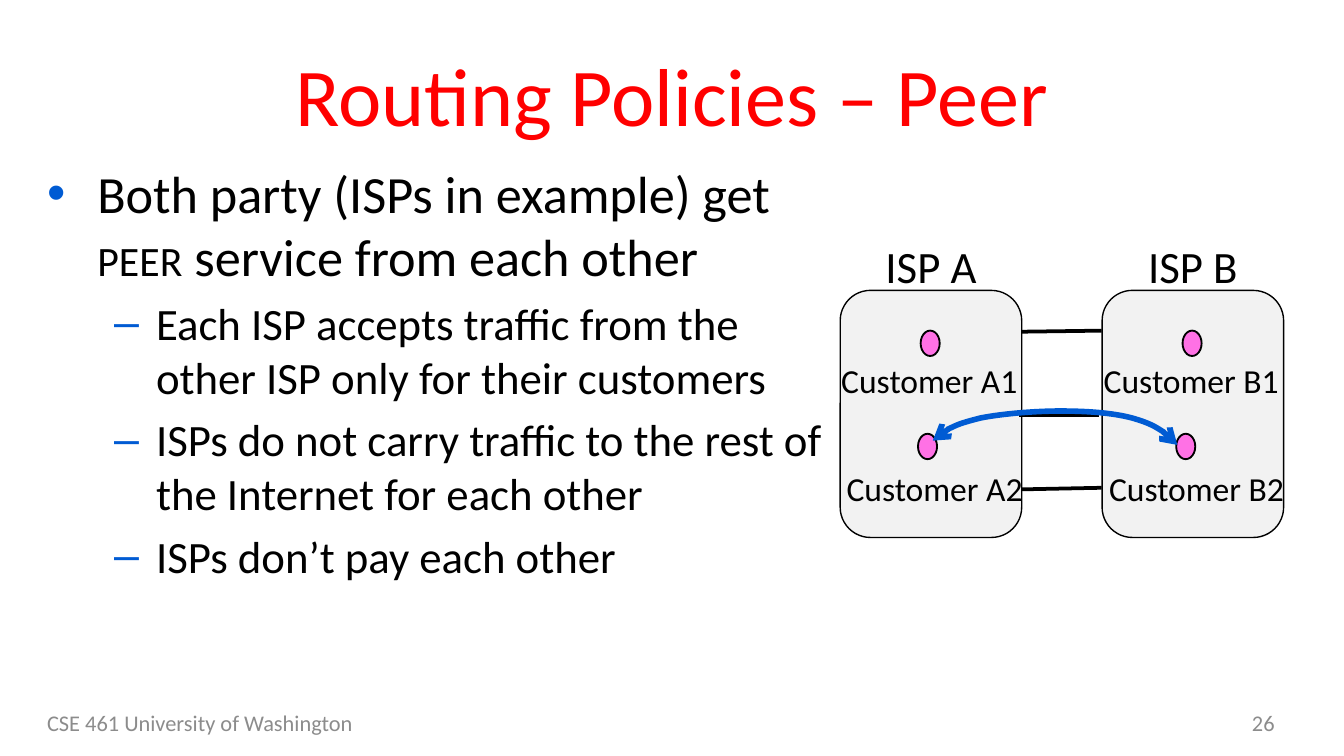
from typing import NamedTuple

from lxml import etree
from pptx import Presentation
from pptx.dml.color import RGBColor
from pptx.enum.shapes import MSO_CONNECTOR, MSO_SHAPE
from pptx.enum.text import MSO_ANCHOR, PP_ALIGN
from pptx.oxml.ns import qn
from pptx.util import Cm, Pt

LEFT, CENTER, RIGHT = PP_ALIGN.LEFT, PP_ALIGN.CENTER, PP_ALIGN.RIGHT
TOP, MIDDLE = MSO_ANCHOR.TOP, MSO_ANCHOR.MIDDLE
ROUNDED, OVAL = MSO_SHAPE.ROUNDED_RECTANGLE, MSO_SHAPE.OVAL
STRAIGHT = MSO_CONNECTOR.STRAIGHT

FONT = "Calibri"
BLACK = RGBColor(0x00, 0x00, 0x00)
RED = RGBColor(0xFF, 0x00, 0x00)
GRAY = RGBColor(0x8C, 0x8C, 0x8C)
PALE = RGBColor(0xF2, 0xF2, 0xF2)
PINK = RGBColor(0xFF, 0x71, 0xE5)
BLUE = RGBColor(0x00, 0x5B, 0xD3)


class Box(NamedTuple):
    x: float
    y: float
    w: float
    h: float


class Bullet(NamedTuple):
    char: str
    level: int
    margin: float
    hang: float
    size: int
    runs: list[tuple[str, bool]]


class Isp(NamedTuple):
    letter: str
    x: float
    lower_dot: float


class Link(NamedTuple):
    x: float
    y1: float
    y2: float


BULLETS = [
    Bullet("•", 0, 0.95, 0.95, 28, [("Both party (ISPs in example) get ", False),
                                    ("peer", True),
                                    (" service from each other", False)]),
] + [
    Bullet("–", 1, 2.06, 0.79, 24, [(text, False)]) for text in (
        "Each ISP accepts traffic from the other ISP only for their customers",
        "ISPs do not carry traffic to the rest of the Internet for each other",
        "ISPs don’t pay each other",
    )
]
ISPS = [Isp("A", 15.88, 1.47), Isp("B", 20.83, 1.4)]
LINKS = [Link(19.3, 6.27, 6.25), Link(19.25, 7.85, 7.85), Link(19.3, 9.25, 9.22)]
LINK_LENGTH = 1.52
CURVE = [
    (22.25, 8.41), (22.17, 8.23), (21.74, 8), (21.39, 7.9),
    (21.01, 7.8), (20.52, 7.77), (20.04, 7.77),
    (19.56, 7.77), (18.95, 7.82), (18.54, 7.9),
    (18.14, 8), (17.75, 8.15), (17.63, 8.33),
]


def add_frame(s, box: Box, anchor=TOP, wrap: bool = True, inset: bool = True):
    tf = s.shapes.add_textbox(*map(Cm, box)).text_frame
    tf.word_wrap = wrap
    tf.vertical_anchor = anchor
    if not inset:
        tf.margin_left = tf.margin_right = tf.margin_top = tf.margin_bottom = 0
    return tf


def add_run(p, text: str, size: int, color: RGBColor):
    r = p.add_run()
    r.text = text
    r.font.name = FONT
    r.font.size = Pt(size)
    r.font.color.rgb = color
    return r


def add_label(s, text: str, box: Box, size: int, color: RGBColor = BLACK,
              align=CENTER, anchor=TOP, wrap: bool = False, inset: bool = True) -> None:
    p = add_frame(s, box, anchor, wrap, inset).paragraphs[0]
    p.alignment = align
    add_run(p, text, size, color)


def add_bullet(p, bullet: Bullet) -> None:
    p.level = bullet.level
    p.space_before = Pt(bullet.size * 0.2)
    pPr = p._p.get_or_add_pPr()
    pPr.set("marL", str(Cm(bullet.margin)))
    pPr.set("indent", str(-Cm(bullet.hang)))
    color = etree.SubElement(pPr, qn("a:buClr"))
    etree.SubElement(color, qn("a:srgbClr")).set("val", str(BLUE))
    etree.SubElement(pPr, qn("a:buFont")).set("typeface", "Arial")
    etree.SubElement(pPr, qn("a:buChar")).set("char", bullet.char)
    for text, small_caps in bullet.runs:
        r = add_run(p, text, bullet.size, BLACK)
        if small_caps:
            r._r.get_or_add_rPr().set("cap", "small")


def add_solid(s, kind, box: Box, fill: RGBColor, width: float) -> None:
    sp = s.shapes.add_shape(kind, *map(Cm, box))
    sp.shadow.inherit = False
    sp.fill.solid()
    sp.fill.fore_color.rgb = fill
    sp.line.color.rgb = BLACK
    sp.line.width = Pt(width)


def add_isp(s, isp: Isp) -> None:
    x = isp.x
    add_solid(s, ROUNDED, Box(x, 5.49, 3.43, 4.67), PALE, 0.75)
    add_label(s, f"ISP {isp.letter}", Box(x + 0.6, 4.39, 2.23, 1.27), 24)
    add_solid(s, OVAL, Box(x + 1.52, 6.25, 0.36, 0.48), PINK, 1)
    add_solid(s, OVAL, Box(x + isp.lower_dot, 8.2, 0.36, 0.48), PINK, 1)
    for number, dx, y in ((1, 0, 6.81), (2, 0.1, 8.84)):
        add_label(s, f"Customer {isp.letter}{number}", Box(x + dx, y, 3.37, 0.76),
                  18, inset=False)


def add_link(s, link: Link) -> None:
    line = s.shapes.add_connector(STRAIGHT, Cm(link.x), Cm(link.y1),
                                  Cm(link.x + LINK_LENGTH), Cm(link.y2))
    line.line.color.rgb = BLACK
    line.line.width = Pt(2)
    etree.SubElement(line._element.spPr, qn("a:effectLst"))


def add_curve(s, points: list[tuple[float, float]]) -> None:
    start, *rest = [(Cm(x), Cm(y)) for x, y in points]
    builder = s.shapes.build_freeform(*start)
    builder.add_line_segments(rest, close=False)
    sp = builder.convert_to_shape()
    sp.shadow.inherit = False
    sp.fill.background()
    sp.line.color.rgb = BLUE
    sp.line.width = Pt(3)
    outline = next(sp._element.iter(qn("a:path")))
    segments = outline.findall(qn("a:lnTo"))
    for i in range(0, len(segments), 3):
        bezier = etree.SubElement(outline, qn("a:cubicBezTo"))
        for segment in segments[i:i + 3]:
            bezier.append(segment[0])
            outline.remove(segment)
    ln = sp.line._get_or_add_ln()
    for end in ("a:headEnd", "a:tailEnd"):
        etree.SubElement(ln, qn(end)).set("type", "arrow")


def main() -> None:
    prs = Presentation()
    prs.slide_width, prs.slide_height = Cm(25.4), Cm(14.29)
    s = prs.slides.add_slide(prs.slide_layouts[6])
    add_label(s, "CSE 461 University of Washington", Box(0.64, 13.28, 8.05, 0.76),
              12, GRAY, LEFT, MIDDLE, True)
    add_label(s, "26", Box(18.42, 13.28, 5.92, 0.76), 12, GRAY, RIGHT, MIDDLE, True)
    add_label(s, "Routing Policies – Peer", Box(0.64, 0.58, 24.13, 2.39),
              44, RED, CENTER, MIDDLE, True)
    tf = add_frame(s, Box(0.64, 2.92, 15.24, 9.96))
    for i, bullet in enumerate(BULLETS):
        add_bullet(tf.add_paragraph() if i else tf.paragraphs[0], bullet)
    for isp in ISPS:
        add_isp(s, isp)
    for link in LINKS:
        add_link(s, link)
    add_curve(s, CURVE)
    prs.save("out.pptx")


if __name__ == "__main__":
    main()
